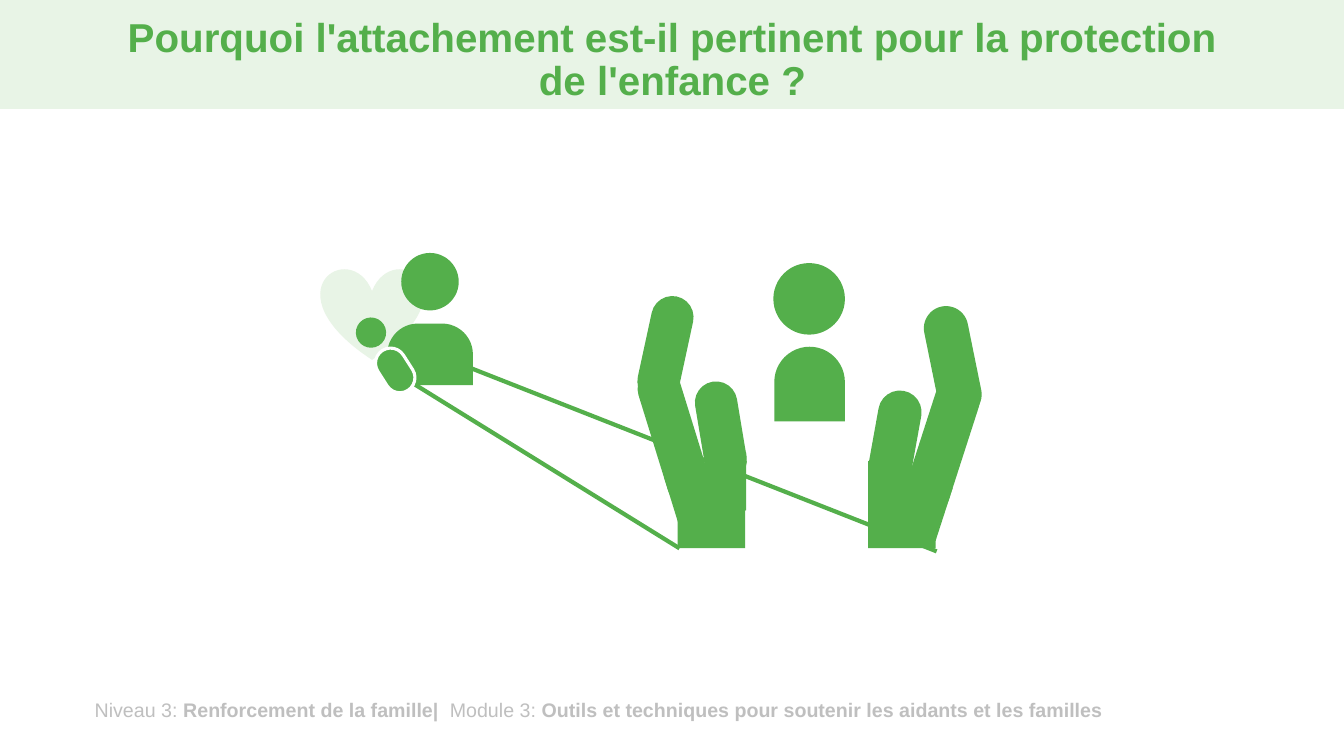
from dataclasses import dataclass

from pptx import Presentation
from pptx.dml.color import RGBColor
from pptx.enum.shapes import MSO_CONNECTOR, MSO_SHAPE as Preset
from pptx.enum.text import MSO_ANCHOR as Anchor, MSO_AUTO_SIZE as AutoSize, PP_ALIGN as Align
from pptx.oxml.ns import qn
from pptx.util import Inches, Pt
from lxml.etree import SubElement

# The slide is a grid of 1333 columns by 750 rows
CELL = Inches(0.01)
COLUMNS, ROWS = 1333, 750


@dataclass(frozen=True)
class Theme:
    green: RGBColor = RGBColor.from_string("54AF4B")
    pale: RGBColor = RGBColor.from_string("E8F4E6")
    grey: RGBColor = RGBColor.from_string("BFBFBF")
    white: RGBColor = RGBColor.from_string("FFFFFF")
    font: str = "Arial"
    title_size: float = 28.8
    footer_size: float = 14
    link_width: float = 3
    outline_width: float = 2.25


@dataclass(frozen=True)
class Box:
    left: float
    top: float
    width: float
    height: float

    def inner(self, left, top, width, height):
        return Box(self.left + left, self.top + top, width, height)

    def lengths(self):
        return [round(n * CELL) for n in (self.left, self.top, self.width, self.height)]


THEME = Theme()

# Hand parts: preset, place in the hands box, rotation, mirrored
LEFT_HAND = [
    (Preset.ROUNDED_RECTANGLE, (8, 101, 43, 142), 342.8, False),
    (Preset.ROUNDED_RECTANGLE, (0, 32, 42, 107), 12.2, False),
    (Preset.ROUNDED_RECTANGLE, (55, 117, 42, 100), 350.5, False),
    (Preset.FLOWCHART_MANUAL_INPUT, (41, 184, 55, 85), 72.8, True),
    (Preset.RECTANGLE, (33, 227, 67, 56), 0, False),
]
RIGHT_HAND = [
    (Preset.ROUNDED_RECTANGLE, (273, 111, 45, 142), 17.9, False),
    (Preset.ROUNDED_RECTANGLE, (284, 42, 44, 111), 348.5, False),
    (Preset.ROUNDED_RECTANGLE, (227, 126, 43, 100), 10.2, False),
    (Preset.FLOWCHART_MANUAL_INPUT, (228, 192, 55, 88), 287.9, False),
    (Preset.RECTANGLE, (222, 227, 67, 56), 0, False),
]


def add_part(shapes, preset, box, fill=THEME.green, rotation=0, mirrored=False):
    part = shapes.add_shape(preset, *box.lengths())
    part.shadow.inherit = False
    part.fill.solid()
    part.fill.fore_color.rgb = fill
    part.line.fill.background()
    part.rotation = rotation
    if preset in (Preset.ROUNDED_RECTANGLE, Preset.ROUND_2_SAME_RECTANGLE):
        part.adjustments[0] = 0.5
    if mirrored:
        part._element.spPr.find(qn("a:xfrm")).set("flipH", "1")
    return part


def add_link(slide, start, end):
    ends = [round(n * CELL) for n in (*start, *end)]
    link = slide.shapes.add_connector(MSO_CONNECTOR.STRAIGHT, *ends)
    link.line.color.rgb = THEME.green
    link.line.width = Pt(THEME.link_width)
    SubElement(link._element.spPr, qn("a:effectLst"))


def style_run(run, size, color, bold):
    run.font.name = THEME.font
    run.font.size = Pt(size)
    run.font.color.rgb = color
    run.font.bold = bold


def add_header(slide, box):
    add_part(slide.shapes, Preset.RECTANGLE, box, THEME.pale)
    title = slide.shapes.title
    title.left, title.top, title.width, title.height = box.inner(92, 13, 1150, 95).lengths()
    # Bring the title in front of its band
    slide.shapes._spTree.append(title._element)
    frame = title.text_frame
    frame.text = "Pourquoi l'attachement est-il pertinent pour la protection de l'enfance ?"
    frame.word_wrap = True
    frame.auto_size = AutoSize.NONE
    frame.vertical_anchor = Anchor.MIDDLE
    heading = frame.paragraphs[0]
    heading.alignment = Align.CENTER
    heading.line_spacing = 0.9
    style_run(heading.runs[0], THEME.title_size, THEME.green, True)


def add_footer(slide, box):
    frame = slide.shapes.add_textbox(*box.lengths()).text_frame
    frame.word_wrap = True
    for wording, bold in [
        ("Niveau 3: ", False),
        ("Renforcement de la famille|  ", True),
        ("Module 3: ", False),
        ("Outils et techniques pour soutenir les aidants et les familles", True),
    ]:
        run = frame.paragraphs[0].add_run()
        run.text = wording
        style_run(run, THEME.footer_size, THEME.grey, bold)


def add_protected_person(slide, box):
    """A person standing between two protecting hands."""
    scene = slide.shapes.add_group_shape().shapes
    for preset, place, rotation, mirrored in LEFT_HAND + RIGHT_HAND:
        add_part(scene, preset, box.inner(*place), rotation=rotation, mirrored=mirrored)
    add_part(scene, Preset.ROUND_2_SAME_RECTANGLE, box.inner(129, 83, 70, 74))
    add_part(scene, Preset.OVAL, box.inner(128, 0, 71, 71))


def add_caregiver(slide, box):
    """An adult holding a baby in front of a heart."""
    family = slide.shapes.add_group_shape().shapes
    add_part(family, Preset.HEART, box.inner(0, 15, 102, 91), THEME.pale)
    add_part(family, Preset.OVAL, box.inner(80, 0, 57, 57))
    add_part(family, Preset.ROUND_2_SAME_RECTANGLE, box.inner(66, 70, 85, 61))
    add_part(family, Preset.OVAL, box.inner(35, 64, 30, 30), rotation=327.5)
    baby = add_part(family, Preset.ROUNDED_RECTANGLE, box.inner(59, 93, 30, 47), rotation=327.5)
    baby.line.color.rgb = THEME.white
    baby.line.width = Pt(THEME.outline_width)


def main():
    deck = Presentation()
    deck.slide_width, deck.slide_height = COLUMNS * CELL, ROWS * CELL
    slide = deck.slides.add_slide(deck.slide_layouts[5])

    add_header(slide, Box(0, 0, COLUMNS, 108))
    add_footer(slide, Box(84, 687, 1062, 34))

    # Links run behind the figures, from the caregiver to the hands
    add_link(slide, (413, 344), (929, 547))
    add_protected_person(slide, Box(639, 261, 328, 283))
    add_link(slide, (380, 362), (674, 544))
    add_caregiver(slide, Box(318, 251, 151, 140))

    deck.save("out.pptx")


if __name__ == "__main__":
    main()
